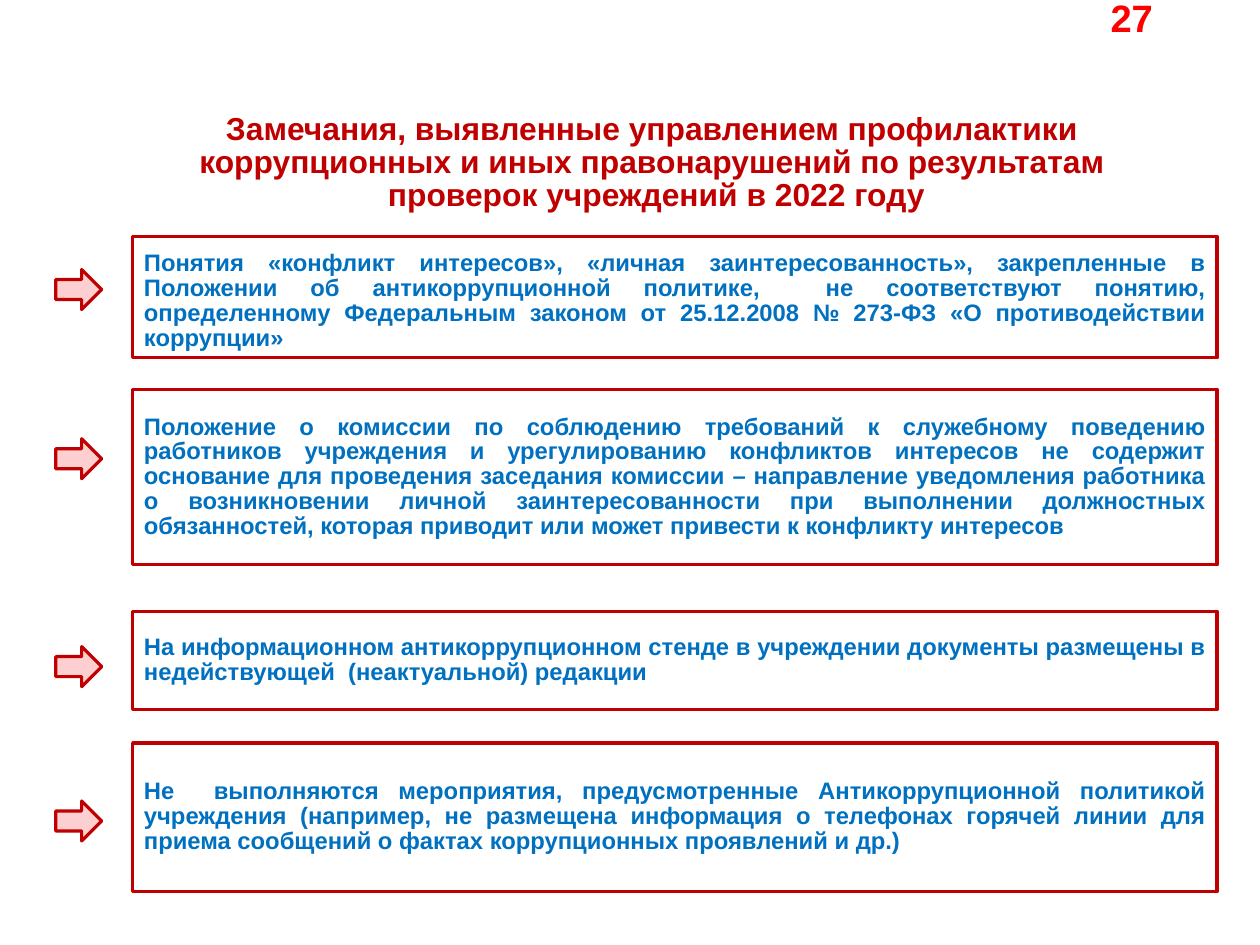
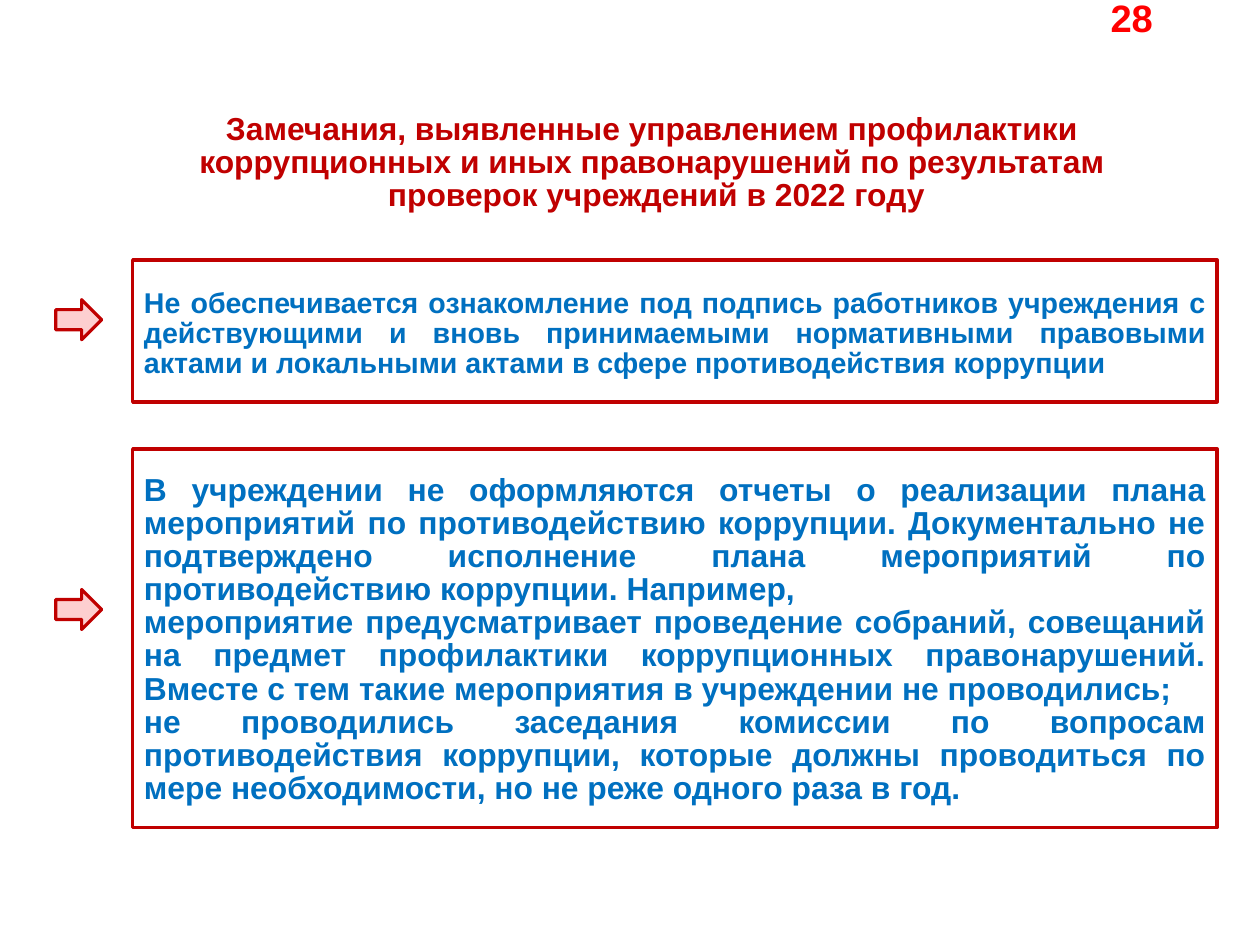
from pptx import Presentation
from pptx.dml.color import RGBColor
from pptx.enum import shapes, text
from pptx.util import Cm, Pt

COLORS = {"number": "FF0000", "accent": "C00000", "remark": "0070C0", "arrow": "FDCFD0"}
FONT = "Arial"
LINE_SPACING = 0.87

TITLE = [
    "Замечания, выявленные управлением профилактики ",
    "коррупционных и иных правонарушений по результатам ",
    "проверок учреждений в 2022 году",
]

# Each remark: box top, box height, arrow top (cm), font size, extra top inset (cm), paragraphs
PAGES = {
    27: [
        (5.26, 2.69, 5.99, 15, 0.18, [
            "Понятия «конфликт интересов», «личная заинтересованность», закрепленные в "
            "Положении об антикоррупционной политике,  не соответствуют понятию, "
            "определенному Федеральным законом от 25.12.2008 № 273-ФЗ "
            "«О противодействии коррупции»"]),
        (8.66, 3.89, 9.75, 15, 0, [
            "Положение о комиссии по соблюдению требований к служебному поведению "
            "работников учреждения и урегулированию конфликтов интересов не содержит "
            "основание для проведения заседания комиссии – направление уведомления "
            "работника о возникновении личной заинтересованности при выполнении "
            "должностных обязанностей, которая приводит или может привести к "
            "конфликту интересов "]),
        (13.59, 2.18, 14.37, 15, 0, [
            "На информационном антикоррупционном стенде в учреждении документы "
            "размещены в недействующей  (неактуальной) редакции"]),
        (16.51, 3.3, 17.8, 15, 0, [
            "Не  выполняются мероприятия, предусмотренные Антикоррупционной политикой "
            "учреждения (например, не размещена информация о телефонах горячей линии "
            "для приема сообщений о фактах коррупционных проявлений и др.)"]),
    ],
    28: [
        (5.78, 3.15, 6.66, 18, 0.17, [
            "Не обеспечивается ознакомление под подпись работников учреждения с "
            "действующими и вновь принимаемыми нормативными правовыми актами и "
            "локальными актами в сфере противодействия коррупции"]),
        (9.98, 8.41, 13.1, 20, 0.09, [
            "В учреждении не оформляются отчеты о реализации плана мероприятий по "
            "противодействию коррупции. Документально не подтверждено исполнение плана "
            "мероприятий по противодействию коррупции. Например,",
            "мероприятие предусматривает проведение собраний, совещаний на предмет "
            "профилактики коррупционных правонарушений. Вместе с тем такие мероприятия "
            "в учреждении не проводились; ",
            "не проводились заседания комиссии по вопросам противодействия коррупции, "
            "которые должны проводиться по мере необходимости, но не реже одного раза "
            "в год. "]),
    ],
}


def write(shape, lines, size, color, align, spacing=None):
    frame = shape.text_frame
    frame.word_wrap = True
    frame.text = "\n".join(lines)
    for paragraph in frame.paragraphs:
        paragraph.alignment = align
        paragraph.line_spacing = spacing
        paragraph.font.name = FONT
        paragraph.font.size = Pt(size)
        paragraph.font.bold = True
        paragraph.font.color.rgb = RGBColor.from_string(COLORS[color])


def outlined(slide, kind, left, top, width, height, line_width):
    shape = slide.shapes.add_shape(kind, Cm(left), Cm(top), Cm(width), Cm(height))
    shape.shadow.inherit = False
    shape.fill.background()
    shape.line.color.rgb = RGBColor.from_string(COLORS["accent"])
    shape.line.width = Pt(line_width)
    return shape


deck = Presentation()
deck.slide_width, deck.slide_height = Cm(28), Cm(21)

for page, remarks in PAGES.items():
    slide = deck.slides.add_slide(deck.slide_layouts[6])

    # Page number and title
    number = slide.shapes.add_textbox(Cm(24.43), Cm(-0.13), Cm(2.64), Cm(1.24))
    number.text_frame.margin_top = 0
    write(number, [str(page)], 24, "number", text.PP_ALIGN.LEFT)
    title = slide.shapes.add_textbox(Cm(1.85), Cm(2.41), Cm(25.48), Cm(2.49))
    write(title, TITLE, 20, "accent", text.PP_ALIGN.CENTER, LINE_SPACING)

    # Remarks, each with its arrow
    for top, height, arrow_top, size, inset, lines in remarks:
        remark = outlined(slide, shapes.MSO_SHAPE.RECTANGLE, 2.95, top, 24.1, height, 2.25)
        remark.text_frame.vertical_anchor = text.MSO_ANCHOR.MIDDLE
        remark.text_frame.margin_top = Cm(0.13 + inset)
        write(remark, lines, size, "remark", text.PP_ALIGN.JUSTIFY, LINE_SPACING)

        arrow = outlined(slide, shapes.MSO_SHAPE.RIGHT_ARROW, 1.24, arrow_top, 1.02, 0.89, 2)
        arrow.fill.solid()
        arrow.fill.fore_color.rgb = RGBColor.from_string(COLORS["arrow"])

deck.save("out.pptx")
